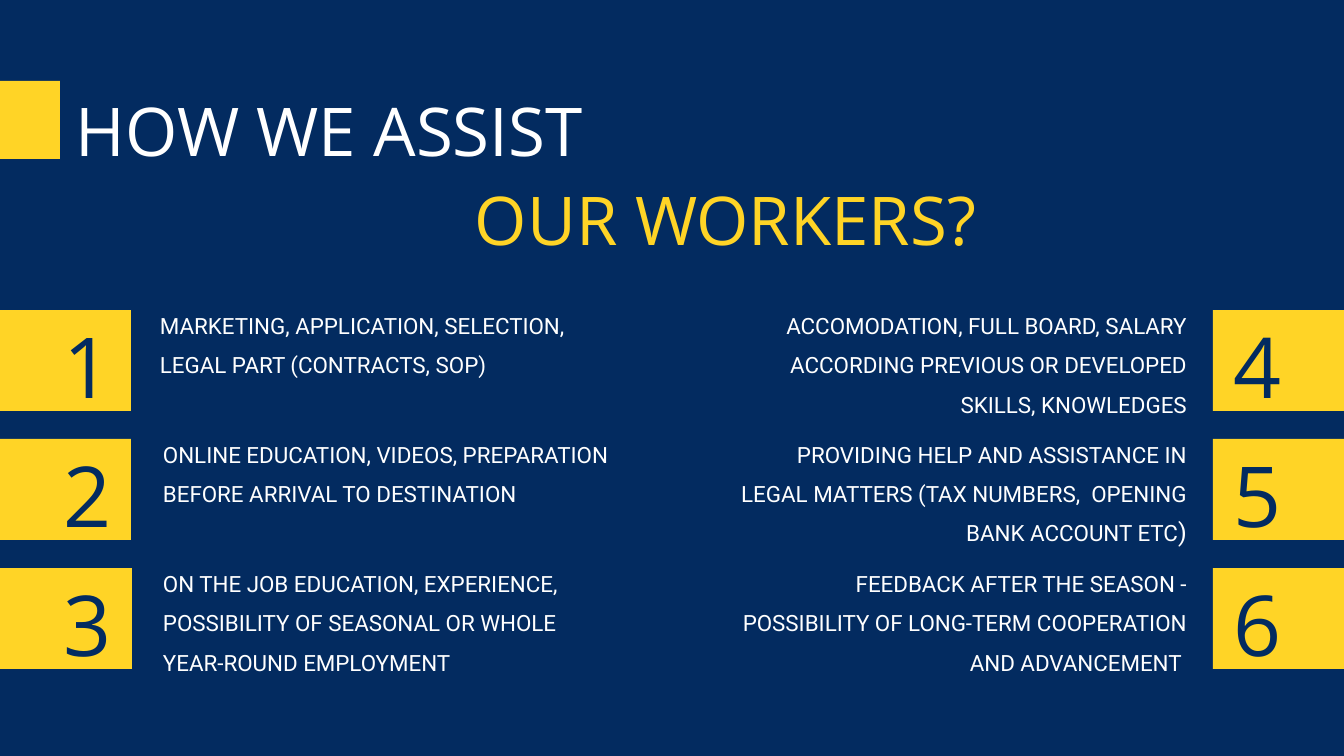
from pptx import Presentation, util as u
from pptx.dml.color import RGBColor
from pptx.enum import shapes, text

PX = 914400 / 100.8
NAVY = RGBColor(0x03, 0x2B, 0x60)
YELLOW = RGBColor(0xFF, 0xD4, 0x26)
WHITE = RGBColor(0xFF, 0xFF, 0xFF)
LEFT, CENTER, RIGHT = text.PP_ALIGN.LEFT, text.PP_ALIGN.CENTER, text.PP_ALIGN.RIGHT

deck = Presentation()
deck.slide_width, deck.slide_height = round(1344 * PX), round(756 * PX)
slide = deck.slides.add_slide(deck.slide_layouts[5])
slide.background.fill.solid()
slide.background.fill.fore_color.rgb = NAVY


def add_block(x, y, w, h):
    block = slide.shapes.add_shape(
        shapes.MSO_SHAPE.RECTANGLE, *(round(v * PX) for v in (x, y, w, h)))
    block.shadow.inherit = False
    block.fill.solid()
    block.fill.fore_color.rgb = YELLOW
    block.line.fill.background()


def write(words, box, font, size, color, leading, align=LEFT, holder=None):
    holder = holder or slide.shapes.add_textbox(0, 0, 0, 0)
    holder.left, holder.top, holder.width, holder.height = (round(v * PX) for v in box)
    frame = holder.text_frame
    frame.word_wrap = True
    frame.auto_size = text.MSO_AUTO_SIZE.NONE
    frame.vertical_anchor = text.MSO_ANCHOR.TOP
    frame.margin_left = frame.margin_top = frame.margin_right = frame.margin_bottom = 0
    line = frame.paragraphs[0]
    line.add_run().text = words
    line.alignment = align
    line.line_spacing = u.Pt(leading)
    line.font.name, line.font.size, line.font.color.rgb = font, u.Pt(size), color
    return line


add_block(-30, 81, 90, 78)
write("HOW WE ASSIST", (76, 65, 647, 97), "Open Sans", 48, WHITE, 74.7,
      holder=slide.shapes.title)
write("OUR WORKERS?", (475, 154, 827, 97), "Open Sans", 48, YELLOW, 74.7)

left_column = [
    "MARKETING, APPLICATION, SELECTION, LEGAL PART (CONTRACTS, SOP)",
    "ONLINE EDUCATION, VIDEOS, PREPARATION BEFORE ARRIVAL TO DESTINATION",
    "ON THE JOB EDUCATION, EXPERIENCE, POSSIBILITY OF SEASONAL OR WHOLE YEAR-ROUND EMPLOYMENT",
]
right_column = [
    "ACCOMODATION, FULL BOARD, SALARY ACCORDING PREVIOUS OR DEVELOPED SKILLS, KNOWLEDGES",
    "PROVIDING HELP AND ASSISTANCE IN LEGAL MATTERS (TAX NUMBERS,  OPENING BANK ACCOUNT ETC",
    "FEEDBACK AFTER THE SEASON - POSSIBILITY OF LONG-TERM COOPERATION AND ADVANCEMENT ",
]
columns = [
    (left_column, 1, (-78, -78, -77), 43, (160, 163, 163), LEFT),
    (right_column, 4, (1213, 1213, 1213), 1213, (735, 735, 735), RIGHT),
]

for services, first, block_xs, number_x, service_xs, align in columns:
    for row, service in enumerate(services):
        shift = row * 129
        add_block(block_xs[row], 310 + shift, 209, 101)
        write(str(first + row), (number_x, 298 + shift, 88, 109),
              "Open Sans", 60, NAVY, 84, CENTER)
        line = write(service, (service_xs[row], 300 + shift, 452, 115),
                     "Roboto", 16, WHITE, 28, align)
        if service.endswith("ETC"):
            bracket = line.add_run()
            bracket.text = ")"
            bracket.font.size = u.Pt(18)

deck.save("out.pptx")
